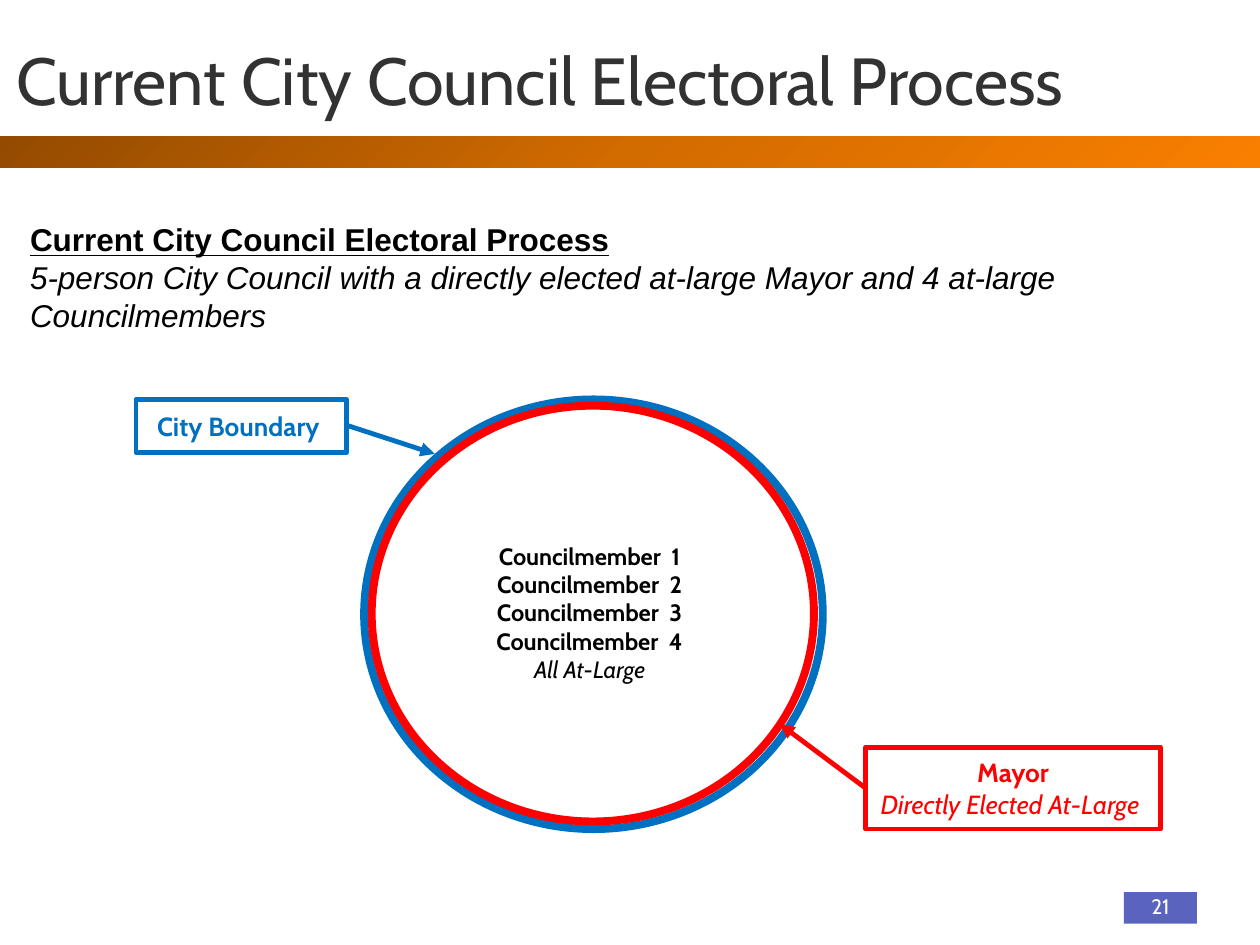
from lxml.etree import SubElement
from pptx import Presentation
from pptx.dml.color import RGBColor
from pptx.enum.shapes import MSO_SHAPE
from pptx.enum.text import MSO_ANCHOR, PP_ALIGN
from pptx.oxml import parse_xml
from pptx.oxml.ns import nsdecls, qn
from pptx.util import Inches, Pt

BLACK = RGBColor(0x00, 0x00, 0x00)
WHITE = RGBColor(0xFF, 0xFF, 0xFF)
CHARCOAL = RGBColor(0x32, 0x32, 0x32)
BLUE = RGBColor(0x00, 0x70, 0xC0)
RED = RGBColor(0xFF, 0x00, 0x00)
VIOLET = RGBColor(0x5A, 0x63, 0xBE)
BAND_STOPS = ((0, "944B00"), (50, "D26B00"), (100, "F97F00"))


def write_lines(shape, lines, size, color, align=PP_ALIGN.CENTER,
                anchor=MSO_ANCHOR.MIDDLE, font_name="Cabin"):
    """Fill a shape with lines, each given as its text and its style letters."""
    frame = shape.text_frame
    frame.word_wrap = True
    frame.vertical_anchor = anchor
    frame.text = "\n".join(text for text, style in lines)
    for paragraph, (text, style) in zip(frame.paragraphs, lines):
        paragraph.alignment = align
        for run in paragraph.runs:
            font = run.font
            font.name, font.size = font_name, Pt(size)
            font.color.rgb = color
            font.bold, font.italic = "b" in style, "i" in style
            font.underline = "u" in style
    return frame


def add_text(slide, box, lines, size, color, **layout):
    """Add a text box and return its text frame."""
    shape = slide.shapes.add_textbox(*map(Inches, box))
    return write_lines(shape, lines, size, color, **layout)


def add_figure(slide, kind, box, fill=None, line=None, width=0):
    """Add a preset shape with an optional fill and outline."""
    shape = slide.shapes.add_shape(kind, *map(Inches, box))
    shape.shadow.inherit = False
    if fill is None:
        shape.fill.background()
    else:
        shape.fill.solid()
        shape.fill.fore_color.rgb = fill
    if line is None:
        shape.line.fill.background()
    else:
        shape.line.color.rgb = line
        shape.line.width = Pt(width)
    return shape


def add_callout(slide, box, pointer, lines, color):
    """Add a bordered callout whose pointer ends in an arrowhead."""
    shape = add_figure(slide, MSO_SHAPE.LINE_CALLOUT_1, box, line=color, width=2.75)
    for index, value in enumerate(pointer):
        shape.adjustments[index] = value
    outline = shape.line._get_or_add_ln()
    SubElement(outline, qn("a:tailEnd"), type="triangle")
    write_lines(shape, lines, 15, color)


def add_band(slide, box):
    """Add the orange band shaded outward from its top left corner."""
    shape = add_figure(slide, MSO_SHAPE.RECTANGLE, box)
    stops = "".join(
        f'<a:gs pos="{position * 1000}"><a:srgbClr val="{color}"/></a:gs>'
        for position, color in BAND_STOPS)
    gradient = parse_xml(
        f'<a:gradFill {nsdecls("a")} rotWithShape="1"><a:gsLst>{stops}</a:gsLst>'
        '<a:path path="circle"><a:fillToRect r="100000" b="100000"/></a:path>'
        '</a:gradFill>')
    properties = shape._element.spPr
    properties.replace(properties.find(qn("a:noFill")), gradient)


def add_summary(slide):
    """Add the indented heading and description of the process."""
    lines = [
        ("Current City Council Electoral Process", "bu"),
        ("5-person City Council with a directly elected at-large Mayor "
         "and 4 at-large Councilmembers", "i"),
    ]
    frame = add_text(slide, (-0.36, 1.7, 10.14, 1.01), lines, 18, BLACK,
                     align=PP_ALIGN.LEFT, anchor=MSO_ANCHOR.TOP, font_name="Arial")
    for paragraph in frame.paragraphs:
        properties = paragraph._p.get_or_add_pPr()
        properties.set("marL", str(Inches(0.5)))
        properties.set("indent", "0")


def add_council(slide):
    """Add the city rings, the council members and both callouts."""
    for box, color in (((2.89, 3.17, 3.64, 3.41), BLUE),
                       ((2.95, 3.22, 3.51, 3.3), RED)):
        add_figure(slide, MSO_SHAPE.OVAL, box, line=color, width=4.5)
    members = [(f"Councilmember  {number}", "b") for number in range(1, 5)]
    add_text(slide, (3.73, 4.25, 1.9, 1.24), members + [("All At-Large", "i")],
             13.5, BLACK, anchor=MSO_ANCHOR.TOP)
    add_callout(slide, (1.08, 3.17, 1.67, 0.42), (0.5, 1.01, 1.03, 1.42),
                [("City Boundary ", "b")], BLUE)
    add_callout(slide, (6.87, 5.93, 2.34, 0.65), (0.5, 0, -0.28, -0.29),
                [("Mayor", "b"), ("Directly Elected At-Large ", "i")], RED)


def main():
    """Build the slide and save it."""
    presentation = Presentation()
    presentation.slide_width, presentation.slide_height = Inches(10), Inches(7.5)
    slide = presentation.slides.add_slide(presentation.slide_layouts[6])
    page = add_figure(slide, MSO_SHAPE.RECTANGLE, (8.92, 7.08, 0.58, 0.25), VIOLET)
    frame = write_lines(page, [("21", "")], 12, WHITE)
    frame.paragraphs[0].line_spacing = 0.9
    add_band(slide, (0, 1.08, 10, 0.25))
    add_council(slide)
    add_text(slide, (0.03, 0.25, 8.89, 0.75),
             [("Current City Council Electoral Process", "")], 38, CHARCOAL,
             align=PP_ALIGN.LEFT)
    add_summary(slide)
    presentation.save("out.pptx")


if __name__ == "__main__":
    main()
